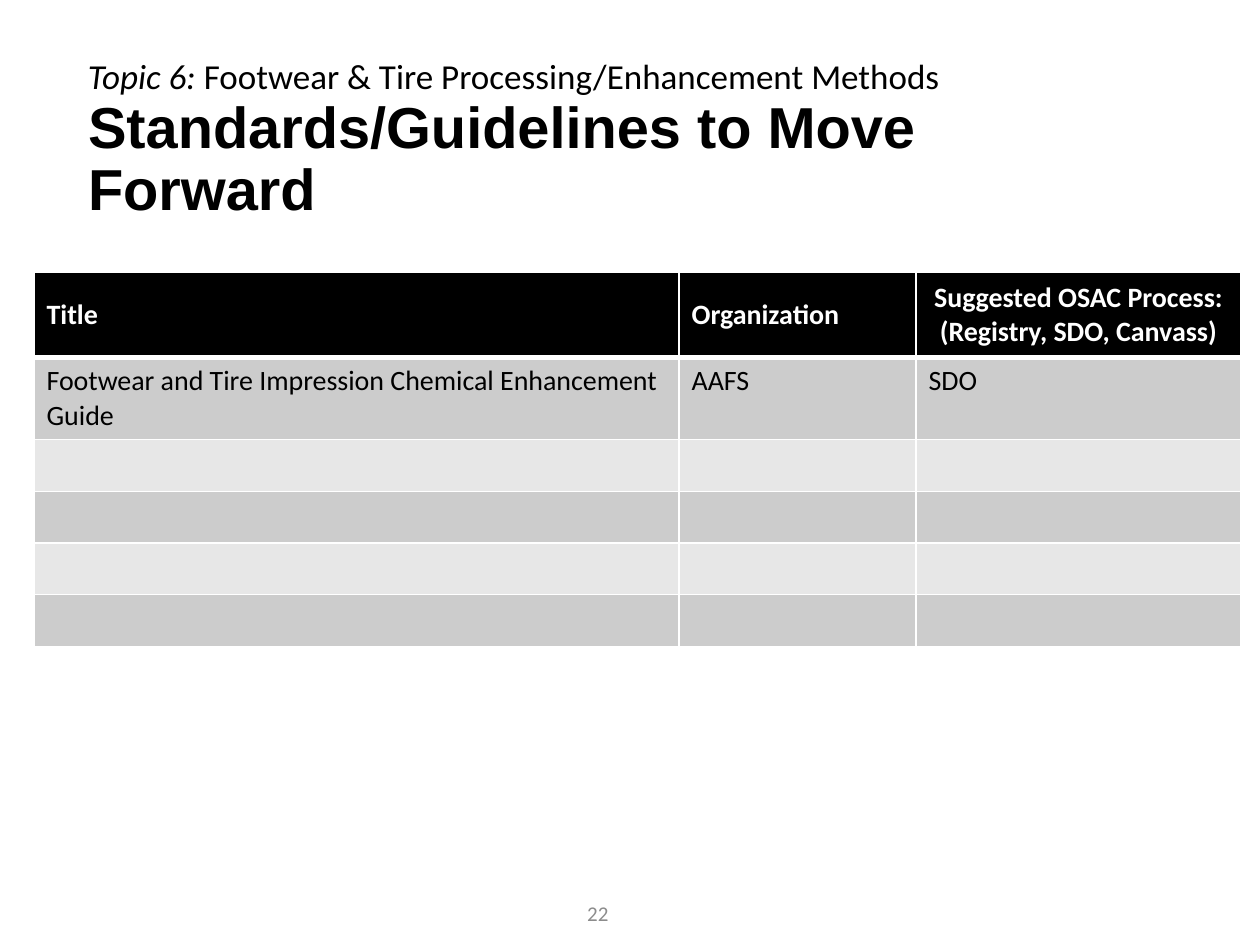
from dataclasses import dataclass

from lxml.etree import SubElement
from pptx import Presentation
from pptx.dml.color import RGBColor as RGB
from pptx.enum.text import MSO_ANCHOR as Anchor, PP_ALIGN as Align
from pptx.oxml.ns import qn
from pptx.util import Inches, Pt


@dataclass(frozen=True)
class Theme:
    heading_font: str = "Arial"
    body_font: str = "Calibri"
    black: str = "000000"
    white: str = "FFFFFF"
    dark_band: str = "CCCCCC"
    light_band: str = "E7E7E7"
    muted: str = "8C8C8C"
    title_size: int = 33
    topic_size: int = 20
    table_size: int = 16
    number_size: int = 12


THEME = Theme()
COLUMN_WIDTHS = [5.12, 1.88, 2.58]
ROW_HEIGHTS = [0.68, 0.65] + [0.41] * 4
ROWS = [
    ["Title", "Organization", "Suggested OSAC Process: (Registry, SDO, Canvass)"],
    ["Footwear and Tire Impression Chemical Enhancement Guide", "AAFS", "SDO"],
] + [[""] * 3] * 4


def style(p, size, color, font=THEME.body_font, bold=False):
    p.font.name = font
    p.font.size = Pt(size)
    p.font.bold = bold
    p.font.color.rgb = RGB.from_string(color)


def add_text(s, box, text, anchor=Anchor.TOP):
    """Add a wrapping text box and return its first paragraph."""
    tf = s.shapes.add_textbox(*map(Inches, box)).text_frame
    tf.word_wrap = True
    tf.vertical_anchor = anchor
    p = tf.paragraphs[0]
    p.add_run().text = text
    return p


def add_topic(s, box):
    p = add_text(s, box, "Topic 6: ")
    p.runs[0].font.italic = True
    p.add_run().text = "Footwear & Tire Processing/Enhancement Methods"
    style(p, THEME.topic_size, THEME.black)


def add_title(s, box):
    p = add_text(s, box, "Standards/Guidelines to Move Forward", Anchor.MIDDLE)
    p.line_spacing = 0.9
    style(p, THEME.title_size, THEME.black, THEME.heading_font, bold=True)


def add_page_number(s, box):
    p = add_text(s, box, "22", Anchor.MIDDLE)
    p.alignment = Align.CENTER
    style(p, THEME.number_size, THEME.muted)


def set_borders(cell, **widths):
    """Draw white borders; widths in points are keyed by side L, R, T, B."""
    tc_pr = cell._tc.get_or_add_tcPr()
    for side, width in widths.items():
        ln = SubElement(tc_pr, qn(f"a:ln{side}"), w=str(Pt(width)))
        SubElement(SubElement(ln, qn("a:solidFill")), qn("a:srgbClr"), val=THEME.white)


def fill_cell(cell, text, row):
    header = row == 0
    set_borders(cell, L=1, R=1, T=3 if row == 1 else 1, B=3 if header else 1)
    band = THEME.dark_band if row % 2 else THEME.light_band
    cell.fill.solid()
    cell.fill.fore_color.rgb = RGB.from_string(THEME.black if header else band)
    cell.vertical_anchor = Anchor.MIDDLE if header else Anchor.TOP
    cell.text = text
    style(cell.text_frame.paragraphs[0], THEME.table_size,
          THEME.white if header else THEME.black, bold=header)


def add_standards_table(s, left, top):
    box = (left, top, sum(COLUMN_WIDTHS), sum(ROW_HEIGHTS))
    table = s.shapes.add_table(len(ROWS), len(COLUMN_WIDTHS), *map(Inches, box)).table
    for column, width in zip(table.columns, COLUMN_WIDTHS):
        column.width = Inches(width)
    for i, (height, texts) in enumerate(zip(ROW_HEIGHTS, ROWS)):
        table.rows[i].height = Inches(height)
        for j, text in enumerate(texts):
            fill_cell(table.cell(i, j), text, i)
    table.cell(0, 2).text_frame.paragraphs[0].alignment = Align.CENTER


def main():
    prs = Presentation()
    prs.slide_width, prs.slide_height = Inches(10), Inches(7.5)
    s = prs.slides.add_slide(prs.slide_layouts[6])
    add_title(s, (0.6, 0.55, 8.62, 1.45))
    add_standards_table(s, 0.27, 2.16)
    add_topic(s, (0.6, 0.38, 7.66, 0.44))
    add_page_number(s, (3.62, 7.05, 2.25, 0.4))
    prs.save("out.pptx")


if __name__ == "__main__":
    main()
